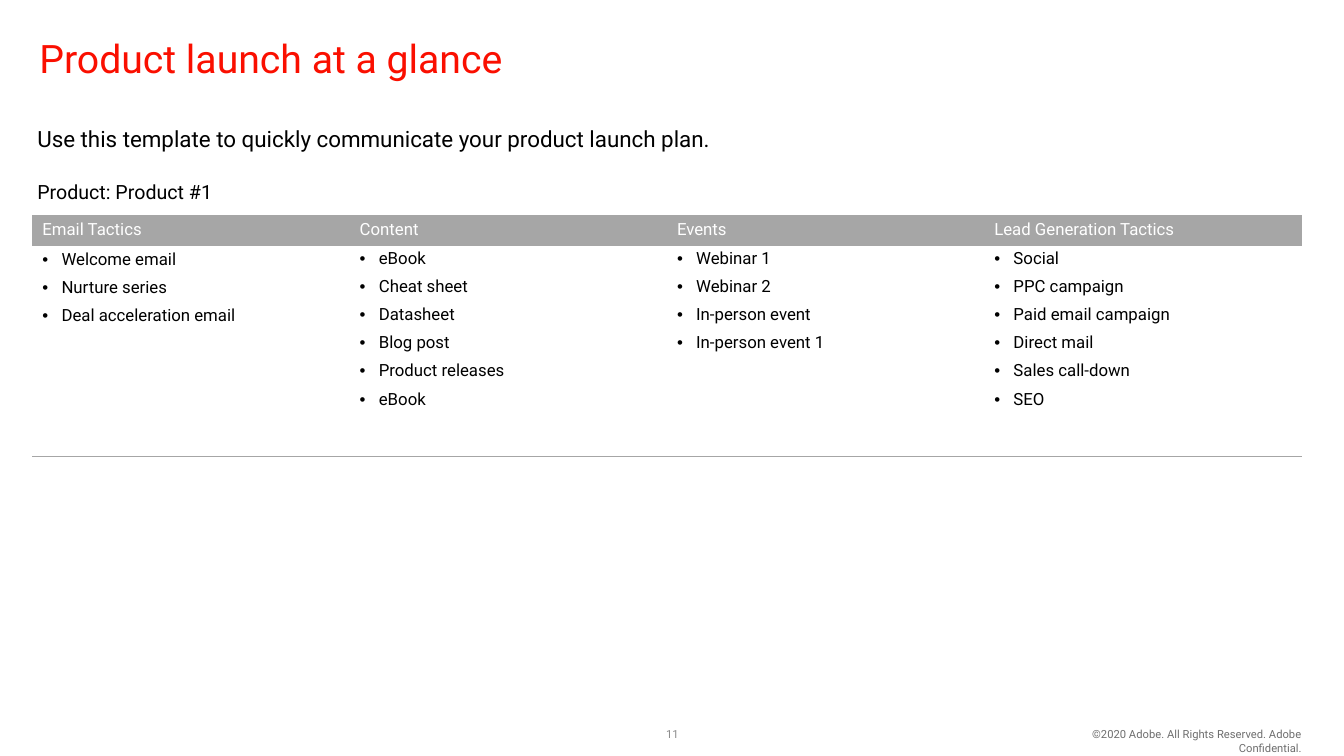
from lxml import etree
from pptx import Presentation
from pptx import util as u
from pptx.dml.color import RGBColor
from pptx.enum import text as t
from pptx.oxml.ns import qn

FACE = "Roboto"
GREY = "A6A6A6"
PLAN = {
    "Email Tactics": ["Welcome email", "Nurture series", "Deal acceleration email"],
    "Content": ["eBook", "Cheat sheet", "Datasheet", "Blog post",
                "Product releases", "eBook"],
    "Events": ["Webinar 1", "Webinar 2", "In-person event", "In-person event 1"],
    "Lead Generation Tactics": ["Social", "PPC campaign", "Paid email campaign",
                                "Direct mail", "Sales call-down", "SEO"],
}


def paint(color, tint):
    """Set a colour object from a hex string."""
    color.rgb = RGBColor.from_string(tint)


def style(par, size, tint, align=t.PP_ALIGN.LEFT):
    """Align a paragraph and format its runs."""
    par.alignment = align
    for run in par.runs:
        run.font.name = FACE
        run.font.size = u.Pt(size)
        run.font.bold = False
        paint(run.font.color, tint)


def write(shape, box, words, size, tint, align=t.PP_ALIGN.LEFT, side=0.05):
    """Place a text shape in its box and fill it with one paragraph."""
    shape.left, shape.top, shape.width, shape.height = map(u.Inches, box)
    frame = shape.text_frame
    frame.text = words
    frame.word_wrap = True
    frame.auto_size = t.MSO_AUTO_SIZE.NONE
    frame.vertical_anchor = t.MSO_ANCHOR.TOP
    frame.margin_left = frame.margin_right = u.Inches(side)
    frame.margin_top = frame.margin_bottom = u.Inches(0.05)
    par = frame.paragraphs[0]
    par.space_before = u.Pt(0)
    style(par, size, tint, align)
    return par


def bullet(par, mark=None, indent=0):
    """Give a paragraph a hanging bullet, or none."""
    props = par._p.get_or_add_pPr()
    props.set("marL", str(u.Inches(indent)))
    props.set("indent", str(-u.Inches(indent)))
    if mark:
        etree.SubElement(props, qn("a:buFont"), typeface="Arial")
        etree.SubElement(props, qn("a:buChar"), char=mark)
    else:
        etree.SubElement(props, qn("a:buNone"))


def border(cell, sides):
    """Rule the listed sides of a cell and clear the others."""
    props = cell._tc.get_or_add_tcPr()
    for side in "LRTB":
        line = etree.SubElement(props, qn("a:ln" + side), w=str(u.Pt(0.5)))
        if side in sides:
            fill = etree.SubElement(line, qn("a:solidFill"))
            etree.SubElement(fill, qn("a:srgbClr"), val=GREY)
        else:
            etree.SubElement(line, qn("a:noFill"))


def heading(slide, box):
    """Write the title, the lead line and the product line."""
    x, y, w = box
    title, body = slide.placeholders
    par = write(title, (x + 0.02, y, w - 0.03, 0.71),
                "Product launch at a glance", 28, "FA0F00")
    par.line_spacing = 0.9
    lead = "Use this template to quickly communicate your product launch plan."
    bullet(write(body, (x, y + 0.85, w, 0.64), lead, 16, "000000"))
    label = slide.shapes.add_textbox(0, 0, 0, 0)
    write(label, (x, y + 1.4, w, 0.38), "Product: Product #1", 14, "000000")


def tactics(slide, box):
    """Draw the table of launch tactics."""
    x, y, w, h = map(u.Inches, box)
    table = slide.shapes.add_table(2, len(PLAN), x, y, w, h).table
    table.horz_banding = False
    table.rows[0].height = u.Inches(0.3)
    table.rows[1].height = h - u.Inches(0.3)
    for col, (name, items) in enumerate(PLAN.items()):
        head, cell = table.cell(0, col), table.cell(1, col)
        for part in (head, cell):
            part.margin_top = part.margin_bottom = u.Inches(0.04 if col else 0.05)
        head.text = name
        head.vertical_anchor = t.MSO_ANCHOR.MIDDLE
        style(head.text_frame.paragraphs[0], 12, "FFFFFF")
        border(head, "B")
        head.fill.solid()
        paint(head.fill.fore_color, GREY)
        cell.text = "\n".join(items)
        for par in cell.text_frame.paragraphs:
            bullet(par, "•", 0.19)
            par.space_after = u.Pt(6)
            style(par, 12, "000000")
        border(cell, "TB")
        cell.fill.background()


def footer(slide, box):
    """Write the page number and the copyright line."""
    x, y, w, h = box
    note = "©2020 Adobe. All Rights Reserved. Adobe Confidential."
    add = slide.shapes.add_textbox
    write(add(0, 0, 0, 0), (x + w - 2.84, y, 2.84, h), note, 8, "6E6E6E",
          t.PP_ALIGN.RIGHT, 0.1)
    write(add(0, 0, 0, 0), (x, y, 0.44, h), "11", 8, "8C8C8C", t.PP_ALIGN.CENTER)


def main():
    """Build and save the slide."""
    deck = Presentation()
    deck.slide_width, deck.slide_height = u.Inches(13.33), u.Inches(7.5)
    slide = deck.slides.add_slide(deck.slide_layouts[1])
    heading(slide, (0.32, 0.34, 12.6))
    tactics(slide, (0.32, 2.13, 12.59, 2.4))
    footer(slide, (6.45, 7.17, 6.56, 0.3))
    deck.save("out.pptx")


if __name__ == "__main__":
    main()
